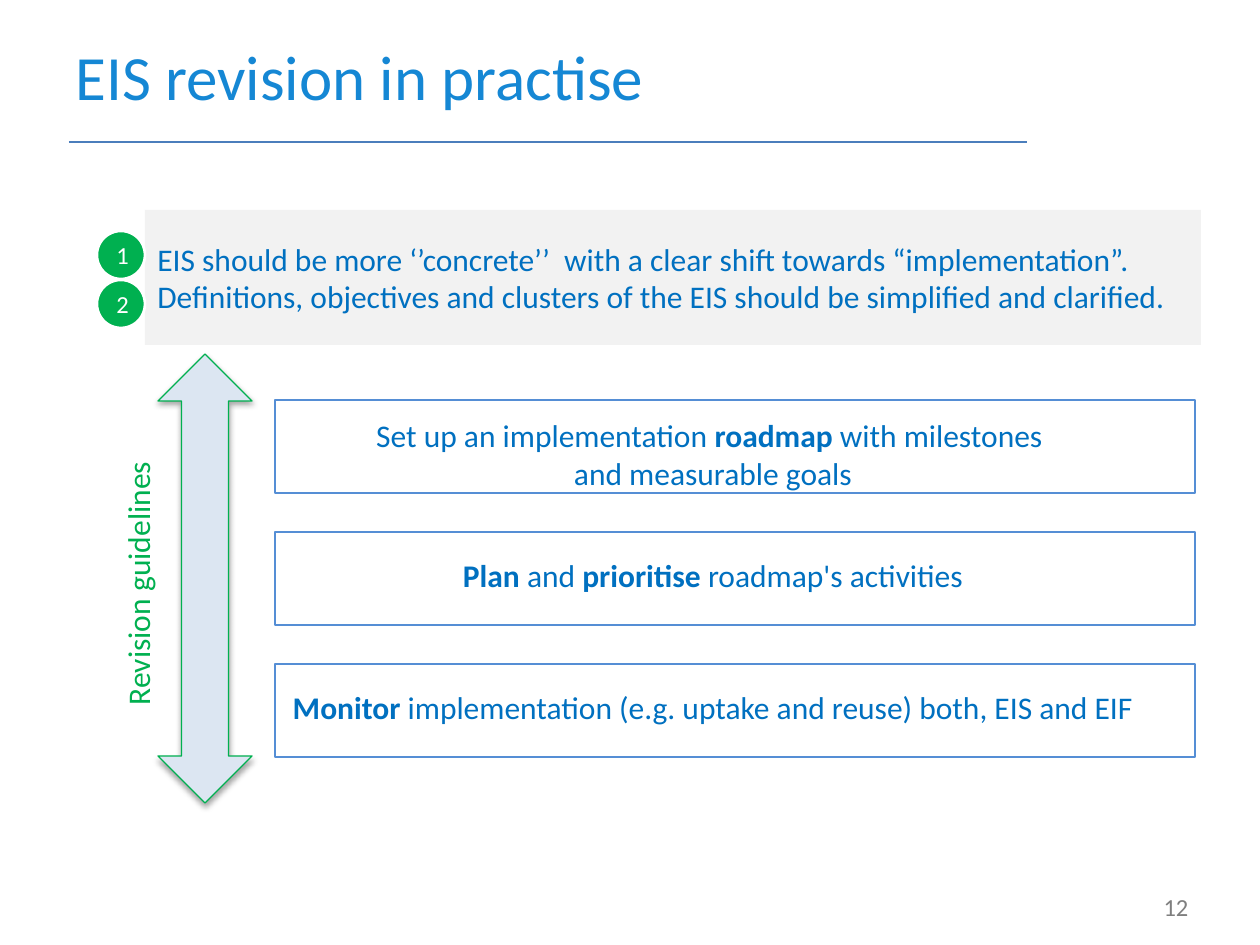
from dataclasses import dataclass

from lxml.etree import SubElement
from pptx import Presentation
from pptx.dml.color import RGBColor
from pptx.enum.shapes import MSO_CONNECTOR, MSO_SHAPE
from pptx.enum.text import MSO_ANCHOR, MSO_AUTO_SIZE, PP_ALIGN
from pptx.oxml.ns import qn
from pptx.util import Emu, Pt

EMU_PER_PX = 914400 / 126
COLORS = {
    "title": "1587D4",
    "text": "0070C0",
    "green": "00B050",
    "card_line": "558ED5",
    "rule": "4B7EBC",
    "banner": "F2F2F2",
    "arrow": "DCE6F2",
    "number": "7F7F7F",
    "white": "FFFFFF",
    "black": "000000",
}


@dataclass(frozen=True)
class Box:
    left: int
    top: int
    width: int
    height: int

    def emu(self) -> list[Emu]:
        return [px(value) for value in (self.left, self.top, self.width, self.height)]


@dataclass(frozen=True)
class Card:
    lines: tuple[str, ...]
    text_offset: int


CARDS = (
    Card(("Set up an implementation **roadmap** with milestones ", "and measurable goals"), 8),
    Card(("**Plan** and **prioritise** roadmap's activities",), 16),
    Card(("**Monitor** implementation (e.g. uptake and reuse) both, EIS and EIF",), 16),
)
BANNER_LINES = (
    "EIS should be more ‘’concrete’’  with a clear shift towards “implementation”.",
    "Definitions, objectives and clusters of the EIS should be simplified and clarified.",
)


def px(value: int) -> Emu:
    return Emu(round(value * EMU_PER_PX))


def rgb(name: str) -> RGBColor:
    return RGBColor.from_string(COLORS[name])


def write_text(shape, *lines: str, size=18, color="text", align=PP_ALIGN.CENTER,
               anchor=MSO_ANCHOR.MIDDLE, inset=None) -> None:
    frame = shape.text_frame
    frame.word_wrap = True
    frame.auto_size = MSO_AUTO_SIZE.NONE
    frame.vertical_anchor = anchor
    if inset is not None:
        frame.margin_left = frame.margin_right = px(inset)
        frame.margin_top = frame.margin_bottom = px(inset)
    for index, line in enumerate(lines):
        paragraph = frame.add_paragraph() if index else frame.paragraphs[0]
        paragraph.alignment = align
        for position, part in enumerate(line.split("**")):
            if part:
                run = paragraph.add_run()
                run.text = part
                run.font.name = "Calibri"
                run.font.size = Pt(size)
                run.font.bold = position % 2 == 1
                run.font.color.rgb = rgb(color)


def add_box(slide, kind: MSO_SHAPE, box: Box, fill: str, line=None, line_width=0.75):
    shape = slide.shapes.add_shape(kind, *box.emu())
    shape.shadow.inherit = False
    shape.fill.solid()
    shape.fill.fore_color.rgb = rgb(fill)
    if line:
        shape.line.color.rgb = rgb(line)
        shape.line.width = Pt(line_width)
    else:
        shape.line.fill.background()
    return shape


def add_label(slide, box: Box, *lines: str, **text_format):
    label = slide.shapes.add_textbox(*box.emu())
    write_text(label, *lines, **text_format)
    return label


def add_rule(slide) -> None:
    rule = slide.shapes.add_connector(
        MSO_CONNECTOR.STRAIGHT, px(69), px(142), px(1027), px(142))
    rule.line.color.rgb = rgb("rule")
    rule.line.width = Pt(0.75)
    SubElement(rule._element.spPr, qn("a:effectLst"))


def add_drop_shadow(shape) -> None:
    effects = shape._element.spPr.find(qn("a:effectLst"))
    shadow = SubElement(effects, qn("a:outerShdw"), blurRad=str(Pt(3.1)),
                        dist=str(Pt(1.8)), dir="5400000", rotWithShape="0")
    color = SubElement(shadow, qn("a:srgbClr"), val=COLORS["black"])
    SubElement(color, qn("a:alpha"), val="35000")


def add_card(slide, card: Card, top: int) -> None:
    add_box(slide, MSO_SHAPE.RECTANGLE, Box(275, top, 920, 93), "white", "card_line")
    add_label(slide, Box(247, top + card.text_offset, 932, 69), *card.lines,
              anchor=MSO_ANCHOR.TOP, inset=8)


def main() -> None:
    """Build the slide on the revision guidelines and save it."""
    presentation = Presentation()
    presentation.slide_width, presentation.slide_height = px(1260), px(945)
    slide = presentation.slides.add_slide(presentation.slide_layouts[5])

    title = slide.shapes.title
    title.left, title.top, title.width, title.height = Box(63, -4, 1134, 158).emu()
    write_text(title, "EIS revision in practise", size=36, color="title", align=PP_ALIGN.LEFT)
    add_rule(slide)

    banner = add_box(slide, MSO_SHAPE.RECTANGLE, Box(145, 210, 1056, 135), "banner")
    write_text(banner, *BANNER_LINES, align=PP_ALIGN.LEFT)
    for index, card in enumerate(CARDS):
        add_card(slide, card, 400 + 132 * index)

    arrow = add_box(slide, MSO_SHAPE.UP_DOWN_ARROW, Box(158, 354, 94, 449), "arrow", "green")
    add_drop_shadow(arrow)
    guidelines = add_label(slide, Box(-30, 549, 350, 69), "Revision guidelines",
                           color="green", anchor=MSO_ANCHOR.TOP, inset=8)
    guidelines.rotation = 270

    for index in range(2):
        badge = add_box(slide, MSO_SHAPE.OVAL, Box(97, 231 + 49 * index, 48, 48),
                        "green", "white", 1.5)
        write_text(badge, str(index + 1), size=14, color="white")
    add_label(slide, Box(1104, 882, 144, 50), "12", size=14, color="number")
    presentation.save("out.pptx")


if __name__ == "__main__":
    main()
